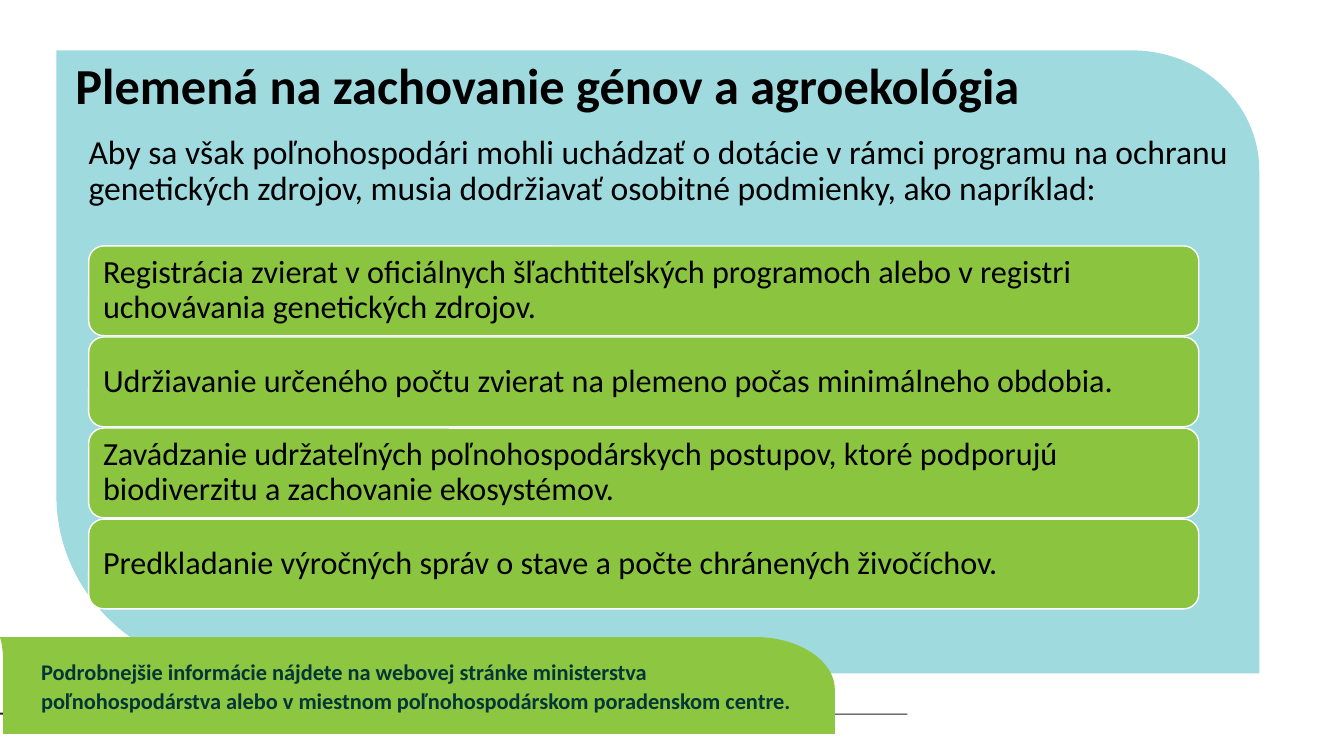
from lxml.etree import SubElement
from pptx import Presentation
from pptx.dml.color import RGBColor
from pptx.enum.shapes import MSO_SHAPE
from pptx.enum.text import MSO_ANCHOR, PP_ALIGN
from pptx.oxml.ns import qn
from pptx.util import Inches, Pt

FONT = "Calibri"
BLACK, WHITE, TEAL, GREEN = "000000", "FFFFFF", "043637", "8BC540"

# Outlines in inches: two numbers are a corner, six are a Bézier curve.
BASE_LINE = ("231F20", [
    (9, 7.09), (4.43, 7.09), (4.41, 7.09, 2.8, 7.08, 2.23, 7.07),
    (1.55, 7.05, 0.52, 7.08, 0.14, 7.08), (0.06, 7.09, 0.01, 7.09, 0, 7.09),
    (0, 7.07), (0.01, 7.07, 0.06, 7.07, 0.14, 7.07),
    (0.52, 7.06, 1.55, 7.04, 2.23, 7.05),
    (2.81, 7.07, 4.41, 7.08, 4.43, 7.08), (9, 7.08)])
BLUE_PANEL = ("9FDADF", [
    (0.56, 0.5), (11.23, 0.5), (11.92, 0.5, 12.49, 1.03, 12.49, 1.69),
    (12.49, 6.68), (2.42, 6.68), (1.39, 6.68, 0.56, 5.89, 0.56, 4.92)])
GREEN_FOOTER = ("8DC641", [
    (0, 6.32), (7.49, 6.32), (7.93, 6.32, 8.28, 6.56, 8.28, 6.84),
    (8.28, 7.28), (0.03, 7.28), (0.03, 6.51),
    (0.03, 6.47, 0.02, 6.43, 0.02, 6.4)])

TITLE = "Plemená na zachovanie génov a agroekológia"
INTRO = ("Aby sa však poľnohospodári mohli uchádzať o dotácie v rámci programu na ochranu "
         "genetických zdrojov, musia dodržiavať osobitné podmienky, ako napríklad:")
CONDITIONS = [
    "Registrácia zvierat v oficiálnych šľachtiteľských programoch alebo v registri "
    "uchovávania genetických zdrojov.",
    "Udržiavanie určeného počtu zvierat na plemeno počas minimálneho obdobia.",
    "Zavádzanie udržateľných poľnohospodárskych postupov, ktoré podporujú "
    "biodiverzitu a zachovanie ekosystémov.",
    "Predkladanie výročných správ o stave a počte chránených živočíchov.",
]
FOOTER = ("Podrobnejšie informácie nájdete na webovej stránke ministerstva "
          "poľnohospodárstva alebo v miestnom poľnohospodárskom poradenskom centre.")

# text, (left, top, width, height), size, colour, bold, line spacing, indent
TEXT_BOXES = [
    (INTRO, (0.53, 1.29, 11.79, 3.6), 24, BLACK, False, 0.9, 0.25),
    (TITLE, (0.65, 0.56, 11.68, 1.09), 36, BLACK, True, 0.9, 0),
    (FOOTER, (0.31, 6.46, 7.72, 0.66), 16, TEAL, True, 1.07, 0),
]
CARD_LEFT, CARD_WIDTH, CARD_HEIGHT = 0.88, 11.01, 0.89
FIRST_CARD_TOP, LAST_CARD_TOP = 2.44, 5.15


def color(hex_string):
    return RGBColor.from_string(hex_string)


def paint(shape, fill):
    shape.shadow.inherit = False
    shape.fill.solid()
    shape.fill.fore_color.rgb = color(fill)


def add_outline(page, fill, outline):
    """Draw the end points as a freeform, then bend the curved segments."""
    ends = [(Inches(part[-2]), Inches(part[-1])) for part in outline]
    builder = page.shapes.build_freeform(*ends[0])
    builder.add_line_segments(ends[1:], close=True)
    shape = builder.convert_to_shape()
    segments = list(shape.element.iter(qn("a:lnTo")))
    for segment, part in zip(segments, outline[1:]):
        if len(part) == 6:
            curve = segment.makeelement(qn("a:cubicBezTo"))
            for x, y in zip(part[::2], part[1::2]):
                SubElement(curve, qn("a:pt"), x=str(Inches(x) - shape.left),
                           y=str(Inches(y) - shape.top))
            segment.getparent().replace(segment, curve)
    paint(shape, fill)
    shape.line.fill.background()


def write(shape, text, size, text_color, bold, line_spacing, indent=0):
    shape.text_frame.word_wrap = True
    para = shape.text_frame.paragraphs[0]
    para.alignment = PP_ALIGN.LEFT
    para.line_spacing = line_spacing
    if indent:
        properties = para._p.get_or_add_pPr()
        properties.set("marL", str(Inches(indent)))
        properties.set("indent", "0")
    span = para.add_run()
    span.text = text
    span.font.name = FONT
    span.font.size = Pt(size)
    span.font.bold = bold
    span.font.color.rgb = color(text_color)


def add_card(page, top, text):
    card = page.shapes.add_shape(
        MSO_SHAPE.ROUNDED_RECTANGLE, Inches(CARD_LEFT), Inches(top),
        Inches(CARD_WIDTH), Inches(CARD_HEIGHT))
    paint(card, GREEN)
    card.line.color.rgb = color(WHITE)
    card.line.width = Pt(1)
    card.text_frame.vertical_anchor = MSO_ANCHOR.MIDDLE
    write(card, text, 23, BLACK, False, 0.9)


def main():
    deck = Presentation()
    deck.slide_width, deck.slide_height = Inches(13.33), Inches(7.5)
    page = deck.slides.add_slide(deck.slide_layouts[6])
    for fill, outline in (BASE_LINE, BLUE_PANEL, GREEN_FOOTER):
        add_outline(page, fill, outline)
    for text, place, *style in TEXT_BOXES:
        box = page.shapes.add_textbox(*map(Inches, place))
        write(box, text, *style)
    step = (LAST_CARD_TOP - FIRST_CARD_TOP) / (len(CONDITIONS) - 1)
    for index, text in enumerate(CONDITIONS):
        add_card(page, FIRST_CARD_TOP + index * step, text)
    deck.save("out.pptx")


if __name__ == "__main__":
    main()
